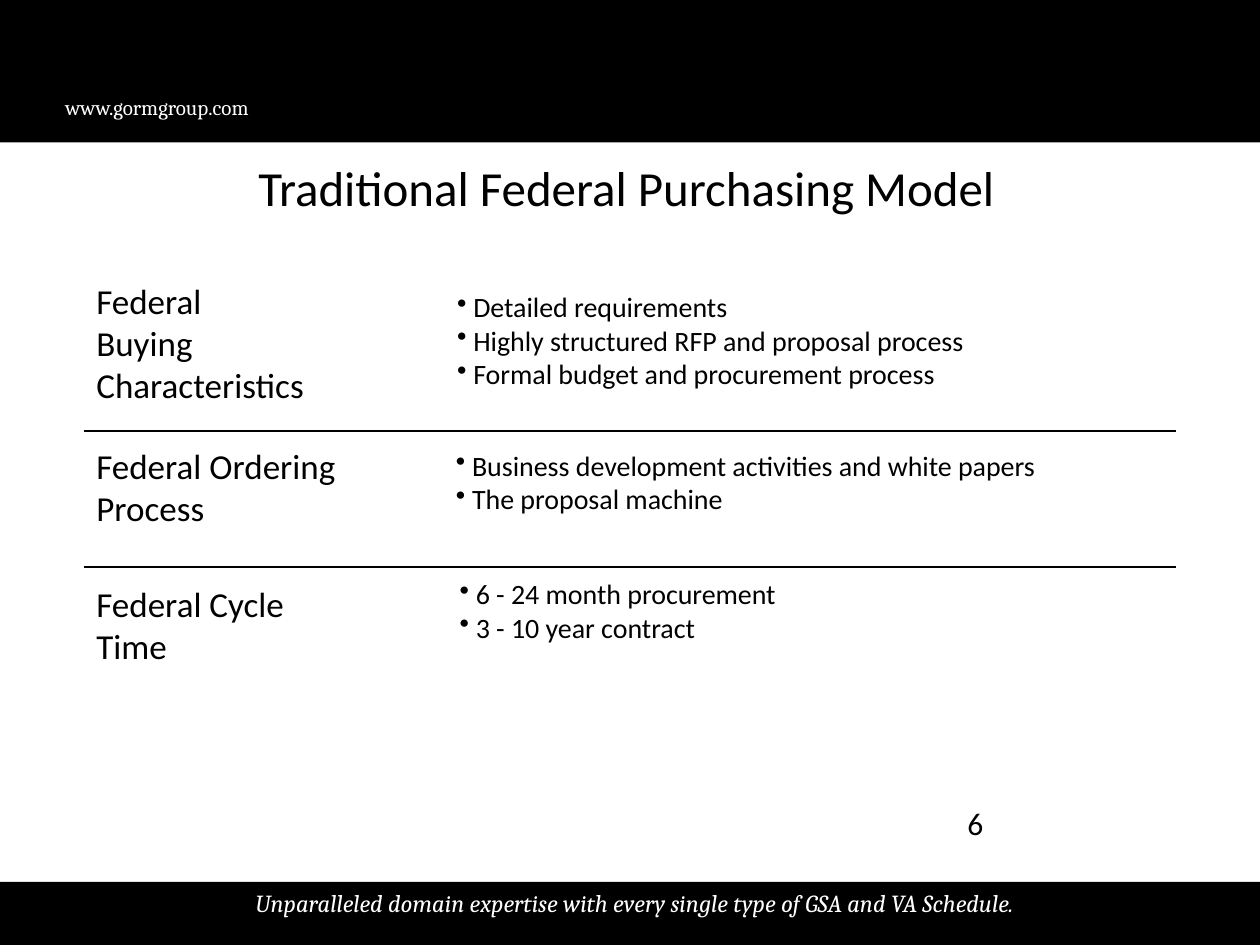
import pptx
import pptx.dml.color
import pptx.enum.shapes
import pptx.enum.text
import pptx.oxml
import pptx.util
from lxml import etree

Pt = pptx.util.Pt
ALIGN = pptx.enum.text.PP_ALIGN
ANCHOR = pptx.enum.text.MSO_ANCHOR
BLACK = pptx.dml.color.RGBColor(0x00, 0x00, 0x00)
WHITE = pptx.dml.color.RGBColor(0xFF, 0xFF, 0xFF)
BODY_FONT = "Calibri"
BRAND_FONT = "Cambria"
PAGE_WIDTH, PAGE_HEIGHT = 720, 540
BULLET_INDENT = 9.2


class Page:
    """Holds the style and the current slide; all lengths are in points."""

    def __init__(self, slide):
        self.slide = slide
        self.shapes = slide.shapes

    def band(self, top, height):
        shape = self.shapes.add_shape(
            pptx.enum.shapes.MSO_SHAPE.RECTANGLE,
            Pt(0), Pt(top), Pt(PAGE_WIDTH), Pt(height))
        shape.shadow.inherit = False
        shape.fill.solid()
        shape.fill.fore_color.rgb = BLACK
        shape.line.fill.background()

    def rule(self, left, right, top):
        line = self.shapes.add_connector(
            pptx.enum.shapes.MSO_CONNECTOR.STRAIGHT,
            Pt(left), Pt(top), Pt(right), Pt(top))
        line.line.color.rgb = BLACK
        line.line.width = Pt(0.75)
        etree.SubElement(line._element.spPr, pptx.oxml.ns.qn("a:effectLst"))

    def text(self, place, lines, size, font=BODY_FONT, color=BLACK, italic=False,
             align=ALIGN.LEFT, anchor=ANCHOR.TOP, wrap=True, bullets=False):
        box = self.shapes.add_textbox(*[Pt(length) for length in place])
        frame = box.text_frame
        frame.word_wrap = wrap
        frame.vertical_anchor = anchor
        for index, line in enumerate(lines):
            para = frame.add_paragraph() if index else frame.paragraphs[0]
            para.alignment = align
            if bullets:
                self.bullet(para)
            span = para.add_run()
            span.text = line
            span.font.name = font
            span.font.size = Pt(size)
            span.font.italic = italic
            span.font.color.rgb = color

    def bullet(self, para):
        properties = para._p.get_or_add_pPr()
        properties.set("marL", str(Pt(BULLET_INDENT)))
        properties.set("indent", str(-Pt(BULLET_INDENT)))
        mark = etree.SubElement(properties, pptx.oxml.ns.qn("a:buChar"))
        mark.set("char", "•")


def main():
    deck = pptx.Presentation()
    deck.slide_width, deck.slide_height = Pt(PAGE_WIDTH), Pt(PAGE_HEIGHT)
    page = Page(deck.slides.add_slide(deck.slide_layouts[6]))

    # Header and footer bands
    page.band(0, 81.36)
    page.band(504, 36)
    page.text((54, 504, 617.76, 24.48),
              ["Unparalleled domain expertise with every single type of GSA and VA Schedule."],
              14, BRAND_FONT, WHITE, italic=True, align=ALIGN.CENTER)
    page.text((30.24, 50.4, 149.76, 21.6), ["www.gormgroup.com"], 12, BRAND_FONT, WHITE)

    # Title
    page.text((108.72, 87.12, 498.24, 38.88), ["Traditional Federal Purchasing Model"],
              28, align=ALIGN.CENTER, anchor=ANCHOR.MIDDLE)

    # Row dividers
    for top in (246.24, 324):
        page.rule(48, 672, top)

    # Rows: heading place and lines, then bullet place and lines
    rows = [
        ((48, 156.24, 134.64, 79.92), ["Federal", "Buying", "Characteristics"],
         (254.16, 162, 310.32, 65.52),
         ["Detailed requirements",
          "Highly structured RFP and proposal process",
          "Formal budget and procurement process"]),
        ((48, 250.56, 177.84, 55.44), ["Federal Ordering Process"],
         (253.44, 252.72, 352.08, 46.08),
         ["Business development activities and white papers", "The proposal machine"]),
        ((48, 329.04, 149.76, 55.44), ["Federal Cycle Time"],
         (255.6, 326.16, 200.16, 46.08),
         ["6 - 24 month procurement", "3 - 10 year contract"]),
    ]
    for heading_place, heading, points_place, points in rows:
        page.text(heading_place, heading, 20)
        page.text(points_place, points, 16, wrap=False, bullets=True)

    # Page number
    page.text((545.76, 455.76, 167.76, 31.68), ["6"], 18)

    deck.save("out.pptx")


if __name__ == "__main__":
    main()
